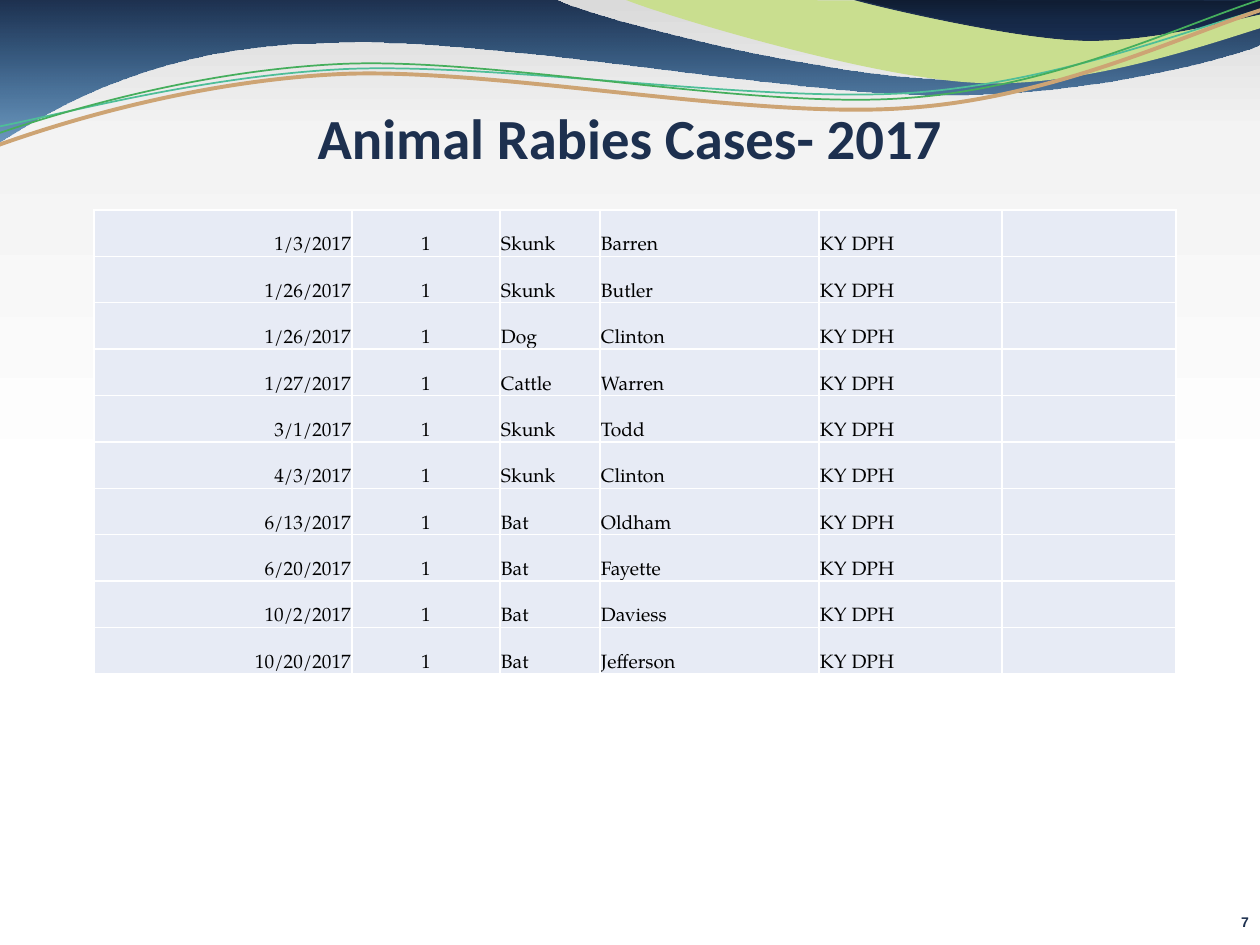
import math

from lxml import etree
from pptx import Presentation
from pptx import util as u
from pptx.dml.color import RGBColor
from pptx.enum import text
from pptx.oxml.ns import qn

PX = u.Inches(1) / 126
COLORS = {"navy": "1D304F", "lime": "C9DE8F", "teal": "4EBE98", "tan": "CDA474",
          "green": "45AE5C", "cell": "E7EBF5", "white": "FFFFFF", "black": "000000"}
ALIGN = text.PP_ALIGN
ANCHOR = text.MSO_ANCHOR


def paint_gradient(fill, element, angle, stops):
    fill.gradient()
    fill.gradient_angle = angle
    stop_list = element.find(".//" + qn("a:gsLst"))
    for stop in list(stop_list):
        stop_list.remove(stop)
    for position, color, alpha in stops:
        stop = etree.SubElement(stop_list, qn("a:gs"), pos=str(position * 1000))
        tint = etree.SubElement(stop, qn("a:srgbClr"), val=color)
        if alpha < 100:
            etree.SubElement(tint, qn("a:alpha"), val=str(alpha * 1000))


def draw_curve(segments, closed, turn=0, center=(0, 0)):
    cx, cy = center
    cos, sin = math.cos(math.radians(-turn)), math.sin(math.radians(-turn))
    outline = [(round((cx + (x - cx) * cos - (y - cy) * sin) * PX),
                round((cy + (x - cx) * sin + (y - cy) * cos) * PX))
               for segment in segments for x, y in zip(segment[::2], segment[1::2])]
    builder = slide.shapes.build_freeform(*outline[0])
    builder.add_line_segments(outline[1:], close=closed)
    curve = builder.convert_to_shape()
    steps = iter(curve.element.findall(".//" + qn("a:lnTo")))
    for segment in segments[1:]:
        step = next(steps)
        if len(segment) == 6:
            bezier = etree.Element(qn("a:cubicBezTo"))
            step.addprevious(bezier)
            for control in (step, next(steps), next(steps)):
                bezier.append(control[0])
                control.getparent().remove(control)
    curve.shadow.inherit = False
    curve.rotation = turn
    return curve


prs = Presentation()
prs.slide_width, prs.slide_height = round(1260 * PX), round(945 * PX)
slide = prs.slides.add_slide(prs.slide_layouts[6])
paint_gradient(slide.background.fill, slide.element, 90,
               [(47, "FFFFFF", 100), (86, "F3F3F3", 100), (100, "DADADA", 100)])

blue_wave = draw_curve([(0, 0), (554, -1), (600, 21, 837, 79, 955, 79),
                        (1075, 79, 1207, 33, 1260, 11), (1261, 45),
                        (1239, 55, 1096, 96, 940, 95), (784, 95, 481, 35, 324, 43),
                        (163, 45, 58, 105, -1, 142), (0, 0)], True)
paint_gradient(blue_wave.fill, blue_wave.element, 270,
               [(0, "1D304F", 100), (100, "004C90", 55)])
blue_wave.line.fill.background()

lime_wave = draw_curve([(626, 0), (663, 15, 873, 79, 979, 83),
                        (1085, 88, 1215, 42, 1261, 28), (1261, 1), (626, 0)], True)
lime_wave.fill.solid()
lime_wave.fill.fore_color.rgb = RGBColor.from_string(COLORS["lime"])
lime_wave.line.fill.background()

dark_wave = draw_curve([(853, -1), (877, 6, 1013, 38, 1082, 40),
                        (1150, 42, 1234, 19, 1264, 13), (1264, 0), (853, -1)], True)
paint_gradient(dark_wave.fill, dark_wave.element, 270,
               [(0, "0F1C31", 100), (50, "152846", 100), (100, "192F53", 100)])
dark_wave.line.color.rgb = RGBColor.from_string(COLORS["navy"])
dark_wave.line.width = u.Pt(0.75)

strands = [
    ("teal", 1, (629, 73), [(-19, 130), (42, 120, 193, 76, 348, 69),
                            (503, 63, 756, 103, 910, 93), (1065, 82, 1201, 24, 1278, 5)]),
    ("tan", 2.25, (632, 81), [(-15, 150), (47, 127, 189, 81, 343, 74),
                              (498, 68, 752, 120, 908, 108), (1065, 97, 1201, 26, 1278, 5)]),
    ("green", 1, (629, 71), [(-18, 139), (45, 117, 188, 71, 341, 64),
                             (495, 57, 751, 110, 907, 98), (1063, 87, 1200, 16, 1276, -5)]),
]
for color, width, center, segments in strands:
    strand = draw_curve(segments, False, -2.7, center)
    strand.fill.background()
    strand.line.color.rgb = RGBColor.from_string(COLORS[color])
    strand.line.width = u.Pt(width)

captions = [
    ("7", (10, 914, 1239, 31), 0, ALIGN.RIGHT,
     {"name": "Arial", "size": u.Pt(8), "bold": True}),
    ("Animal Rabies Cases- 2017", (63, 97, 1134, 82), 6, ALIGN.CENTER,
     {"name": "Calibri", "size": u.Pt(32.4), "bold": True}),
]
for wording, box, top_inset, align, font in captions:
    frame = slide.shapes.add_textbox(*(round(v * PX) for v in box)).text_frame
    layout = {"word_wrap": True, "vertical_anchor": ANCHOR.TOP, "margin_left": 0,
              "margin_top": round(top_inset * PX), "margin_right": 0, "margin_bottom": 0}
    for key, value in layout.items():
        setattr(frame, key, value)
    line = frame.paragraphs[0]
    line.alignment = align
    run = line.add_run()
    run.text = wording
    for key, value in font.items():
        setattr(run.font, key, value)
    run.font.color.rgb = RGBColor.from_string(COLORS["navy"])

cases = [
    ("1/3/2017", "Skunk", "Barren"),
    ("1/26/2017", "Skunk", "Butler"),
    ("1/26/2017", "Dog", "Clinton"),
    ("1/27/2017", "Cattle", "Warren"),
    ("3/1/2017", "Skunk", "Todd"),
    ("4/3/2017", "Skunk", "Clinton"),
    ("6/13/2017", "Bat", "Oldham"),
    ("6/20/2017", "Bat", "Fayette"),
    ("10/2/2017", "Bat", "Daviess"),
    ("10/20/2017", "Bat", "Jefferson"),
]
columns = [(258, ALIGN.RIGHT), (148, ALIGN.CENTER), (100, ALIGN.LEFT),
           (219, ALIGN.LEFT), (183, ALIGN.LEFT), (174, ALIGN.LEFT)]
case_table = slide.shapes.add_table(
    len(cases), len(columns), *(round(v * PX) for v in (94, 210, 1082, 464))).table
case_table.first_row = case_table.horz_banding = False
for column, (width, _) in zip(case_table.columns, columns):
    column.width = round(width * PX)

cell_format = {"vertical_anchor": ANCHOR.BOTTOM, "margin_left": round(PX),
               "margin_top": round(PX), "margin_right": round(PX), "margin_bottom": 0}
cell_font = {"name": "TeX Gyre Pagella", "size": u.Pt(11)}
for row, (date, animal, county) in enumerate(cases):
    for col, value in enumerate((date, "1", animal, county, "KY DPH", "")):
        cell = case_table.cell(row, col)
        cell.text = value
        for key, setting in cell_format.items():
            setattr(cell, key, setting)
        for edge in ("a:lnL", "a:lnR", "a:lnT", "a:lnB"):
            border = etree.SubElement(cell._tc.get_or_add_tcPr(), qn(edge), w=str(u.Pt(1)))
            paint = etree.SubElement(border, qn("a:solidFill"))
            etree.SubElement(paint, qn("a:srgbClr"), val=COLORS["white"])
        cell.fill.solid()
        cell.fill.fore_color.rgb = RGBColor.from_string(COLORS["cell"])
        entry = cell.text_frame.paragraphs[0]
        entry.alignment = columns[col][1]
        for run in entry.runs:
            for key, setting in cell_font.items():
                setattr(run.font, key, setting)
            run.font.color.rgb = RGBColor.from_string(COLORS["black"])

prs.save("out.pptx")
